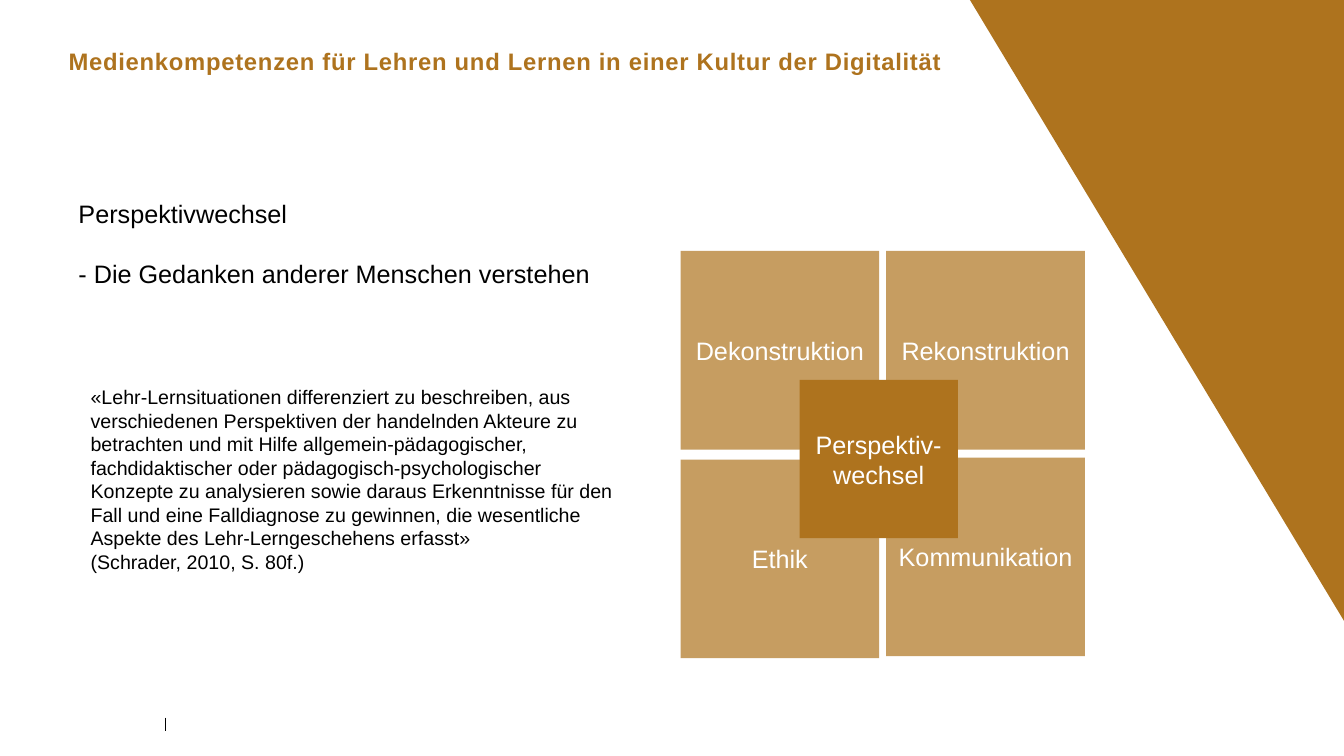
import pptx
import pptx.dml.color
import pptx.enum.shapes
import pptx.enum.text
import pptx.util
from dataclasses import dataclass

Inches = pptx.util.Inches
Pt = pptx.util.Pt
RGB = pptx.dml.color.RGBColor
Align = pptx.enum.text.PP_ALIGN
Anchor = pptx.enum.text.MSO_ANCHOR


@dataclass(frozen=True)
class Theme:
    font: str = "Arial"
    gold: RGB = RGB(0xAE, 0x73, 0x1E)
    sand: RGB = RGB(0xC6, 0x9D, 0x61)
    white: RGB = RGB(255, 255, 255)
    black: RGB = RGB(0, 0, 0)
    head: float = 17
    body: float = 18
    quote: float = 14


THEME = Theme()
TITLE = "Medienkompetenzen für Lehren und Lernen in einer Kultur der Digitalität"
POINTS = ["Perspektivwechsel", "- Die Gedanken anderer Menschen verstehen"]
QUOTE = [
    "«Lehr-Lernsituationen differenziert zu beschreiben, aus verschiedenen "
    "Perspektiven der handelnden Akteure zu betrachten und mit Hilfe "
    "allgemein-pädagogischer, fachdidaktischer oder pädagogisch-psychologischer "
    "Konzepte zu analysieren sowie daraus Erkenntnisse für den Fall und eine "
    "Falldiagnose zu gewinnen, die wesentliche Aspekte des "
    "Lehr-Lerngeschehens erfasst»",
    "(Schrader, 2010, S. 80f.)",
]
SIDE, CORE = 1.97, 1.57
TILES = [  # left, top, side, colour, label
    (6.75, 2.49, SIDE, THEME.sand, "Dekonstruktion"),
    (8.79, 2.49, SIDE, THEME.sand, "Rekonstruktion"),
    (8.79, 4.54, SIDE, THEME.sand, "Kommunikation"),
    (6.75, 4.56, SIDE, THEME.sand, "Ethik"),
    (7.93, 3.77, CORE, THEME.gold, "Perspektiv-wechsel"),
]


def apply(target, form):
    for key, value in form.items():
        setattr(target, key, value)


def write(frame, lines, size, color, bold=False, align=Align.LEFT, gap=0):
    """Fill a text frame with one paragraph per line."""
    frame.word_wrap = True
    for i, line in enumerate(lines):
        para = frame.add_paragraph() if i else frame.paragraphs[0]
        para.alignment = align
        if i and gap:
            para.space_before = Pt(gap)
        run = para.add_run()
        run.text = line
        apply(run.font, {"name": THEME.font, "size": Pt(size), "bold": bold})
        run.font.color.rgb = color


def add_text(slide, box, lines, size, color, **form):
    frame = slide.shapes.add_textbox(*map(Inches, box)).text_frame
    write(frame, lines, size, color, **form)
    return frame


def paint(shape, color):
    shape.shadow.inherit = False
    shape.fill.solid()
    shape.fill.fore_color.rgb = color
    shape.line.fill.background()


def add_tile(slide, left, top, side, color, label):
    kind = pptx.enum.shapes.MSO_SHAPE.RECTANGLE
    tile = slide.shapes.add_shape(kind, *map(Inches, (left, top, side, side)))
    paint(tile, color)
    tile.text_frame.vertical_anchor = Anchor.MIDDLE
    write(tile.text_frame, [label], THEME.body, THEME.white, align=Align.CENTER)


def add_wedge(slide):
    draft = slide.shapes.build_freeform(Inches(9.62), 0)
    edge = Inches(13.33)
    draft.add_line_segments([(edge, 0), (edge, Inches(6.16))], close=True)
    paint(draft.convert_to_shape(), THEME.gold)


def add_tick(slide):
    kind = pptx.enum.shapes.MSO_CONNECTOR.STRAIGHT
    ends = map(Inches, (1.64, 7.12, 1.64, 7.25))
    tick = slide.shapes.add_connector(kind, *ends)
    tick.line.width = Pt(0.5)
    tick.line.color.rgb = THEME.black
    props = tick._element.spPr
    props.append(props.makeelement(pptx.oxml.ns.qn("a:effectLst"), {}))


def add_title(slide):
    frame = add_text(slide, (0.68, 0.46, 9.21, 0.34), [TITLE],
                     THEME.head, THEME.gold, bold=True)
    sides = ("left", "top", "right", "bottom")
    apply(frame, {f"margin_{side}": 0 for side in sides})
    # Letter spacing in hundredths of a point
    frame.paragraphs[0].runs[0].font._element.set("spc", "50")


def main():
    deck = pptx.Presentation()
    apply(deck, {"slide_width": Inches(13.33), "slide_height": Inches(7.5)})
    slide = deck.slides.add_slide(deck.slide_layouts[6])

    # Frame of the page
    add_tick(slide)
    add_wedge(slide)
    add_title(slide)

    # Four fields around the core
    for tile in TILES:
        add_tile(slide, *tile)

    # Statement and quotation
    add_text(slide, (0.68, 1.92, 5.51, 1.01), POINTS,
             THEME.body, THEME.black, gap=21)
    add_text(slide, (0.8, 3.77, 5.51, 1.99), QUOTE, THEME.quote, THEME.black)

    deck.save("out.pptx")


if __name__ == "__main__":
    main()
